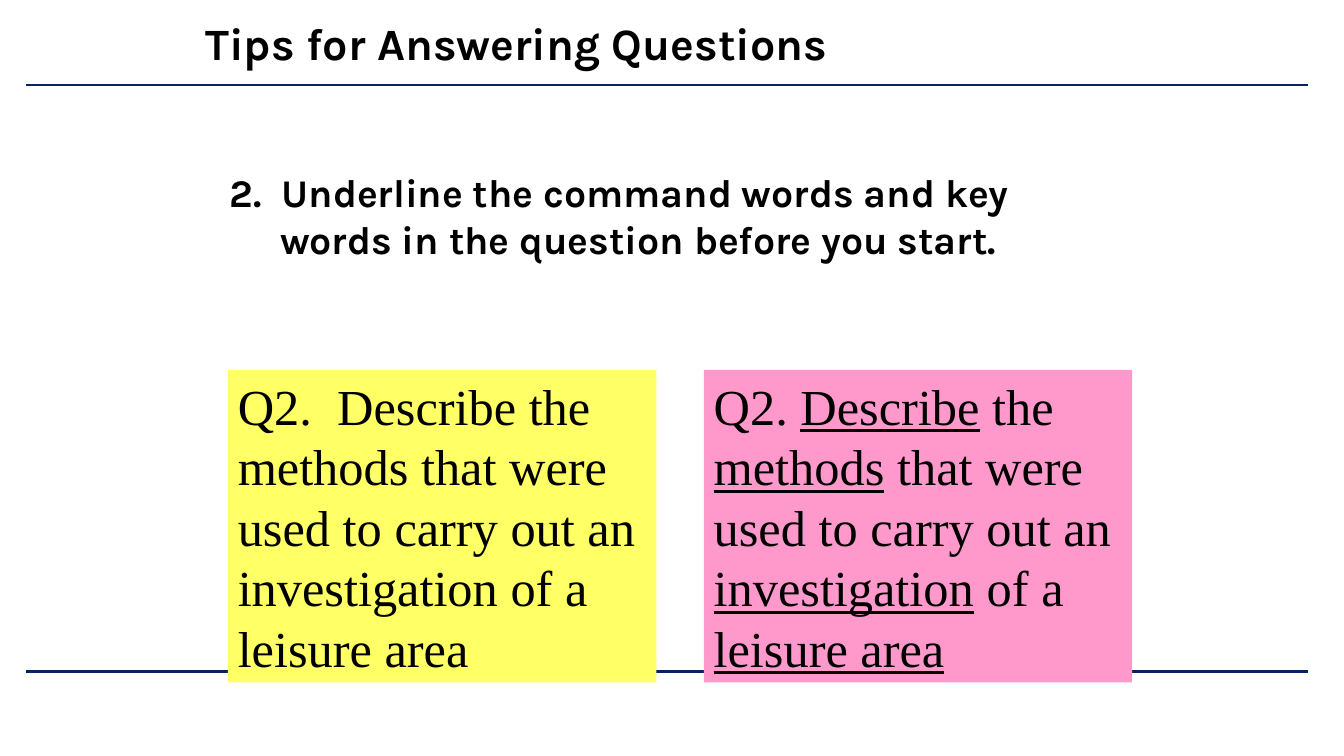
from dataclasses import dataclass

from lxml import etree
from pptx import Presentation
from pptx.dml.color import RGBColor
from pptx.enum.shapes import MSO_CONNECTOR, MSO_SHAPE
from pptx.enum.text import MSO_ANCHOR, MSO_AUTO_SIZE, PP_ALIGN
from pptx.oxml.ns import qn
from pptx.slide import Slide
from pptx.text.text import TextFrame
from pptx.util import Emu, Pt

STRAIGHT = MSO_CONNECTOR.STRAIGHT
RECTANGLE = MSO_SHAPE.RECTANGLE
TOP = MSO_ANCHOR.TOP
LEFT = PP_ALIGN.LEFT
GROW = MSO_AUTO_SIZE.SHAPE_TO_FIT_TEXT

PX = 9144
SLIDE_W, SLIDE_H = 1333, 750
RULE_LEFT, RULE_RIGHT = 26, 1297
HANGING = 50
CARD_TOP, CARD_W, CARD_H = 367, 425, 310
NAVY, BLACK, PINK, YELLOW = "052264", "000000", "FF99CC", "FFFF66"


@dataclass(frozen=True)
class Rule:
    y: int
    width: float


@dataclass(frozen=True)
class Heading:
    text: str
    left: int
    top: int
    width: int
    height: int
    size: int
    wrap: bool
    hanging: int = 0


@dataclass(frozen=True)
class Card:
    left: int
    fill: str
    runs: tuple[tuple[str, bool], ...]


RULES = (Rule(84, 1.5), Rule(666, 1.75))
HEADINGS = (
    Heading("Tips for Answering Questions", 194, 11, 680, 64, 32, False),
    Heading("2.  Underline the command words and key words in the question before you start.",
            218, 162, 827, 150, 28, True, HANGING),
)
CARDS = (
    Card(698, PINK, (
        ("Q2. ", False), ("Describe", True), (" the ", False), ("methods", True),
        (" that were used to carry out an ", False), ("investigation", True),
        (" of a ", False), ("leisure area", True),
    )),
    Card(226, YELLOW, (
        ("Q2.  Describe the methods that were used to carry out an "
         "investigation of a leisure area", False),
    )),
)


def px(n: int) -> Emu:
    """Turn px into EMU."""
    return Emu(n * PX)


def rgb(colour: str) -> RGBColor:
    """Turn a hex string into a colour."""
    return RGBColor.from_string(colour)


def add_text(tf: TextFrame, runs: tuple[tuple[str, bool], ...], font: str, size: int,
             bold: bool = False, wrap: bool = True) -> None:
    """Write one left-aligned paragraph of runs, underlined where flagged."""
    tf.word_wrap = wrap
    tf.auto_size = GROW
    tf.vertical_anchor = TOP
    p = tf.paragraphs[0]
    p.alignment = LEFT
    for text, underline in runs:
        r = p.add_run()
        r.text = text
        r.font.name = font
        r.font.size = Pt(size)
        r.font.bold = bold
        r.font.underline = underline
        r.font.color.rgb = rgb(BLACK)


def draw_rule(s: Slide, rule: Rule) -> None:
    """Draw a horizontal rule across the slide."""
    line = s.shapes.add_connector(STRAIGHT, px(RULE_LEFT), px(rule.y), px(RULE_RIGHT), px(rule.y))
    line.line.color.rgb = rgb(NAVY)
    line.line.width = Pt(rule.width)
    etree.SubElement(line._element.spPr, qn("a:effectLst"))


def draw_heading(s: Slide, heading: Heading) -> None:
    """Draw a bold text box, with a hanging indent if it has one."""
    sp = s.shapes.add_textbox(px(heading.left), px(heading.top),
                              px(heading.width), px(heading.height))
    add_text(sp.text_frame, ((heading.text, False),), "Karla", heading.size, True, heading.wrap)
    if heading.hanging:
        pPr = sp.text_frame.paragraphs[0]._p.get_or_add_pPr()
        pPr.set("marL", str(px(heading.hanging)))
        pPr.set("indent", str(px(-heading.hanging)))


def draw_card(s: Slide, card: Card) -> None:
    """Draw a coloured question card."""
    sp = s.shapes.add_shape(RECTANGLE, px(card.left), px(CARD_TOP), px(CARD_W), px(CARD_H))
    sp.shadow.inherit = False
    sp.fill.solid()
    sp.fill.fore_color.rgb = rgb(card.fill)
    sp.line.fill.background()
    add_text(sp.text_frame, card.runs, "Times New Roman", 36)
    sp.text_frame.paragraphs[0].line_spacing = Pt(43.2)


def main() -> None:
    """Build and save the slide."""
    prs = Presentation()
    prs.slide_width, prs.slide_height = px(SLIDE_W), px(SLIDE_H)
    s = prs.slides.add_slide(prs.slide_layouts[6])
    for rule in RULES:
        draw_rule(s, rule)
    for heading in HEADINGS:
        draw_heading(s, heading)
    for card in CARDS:
        draw_card(s, card)
    prs.save("out.pptx")


if __name__ == "__main__":
    main()
